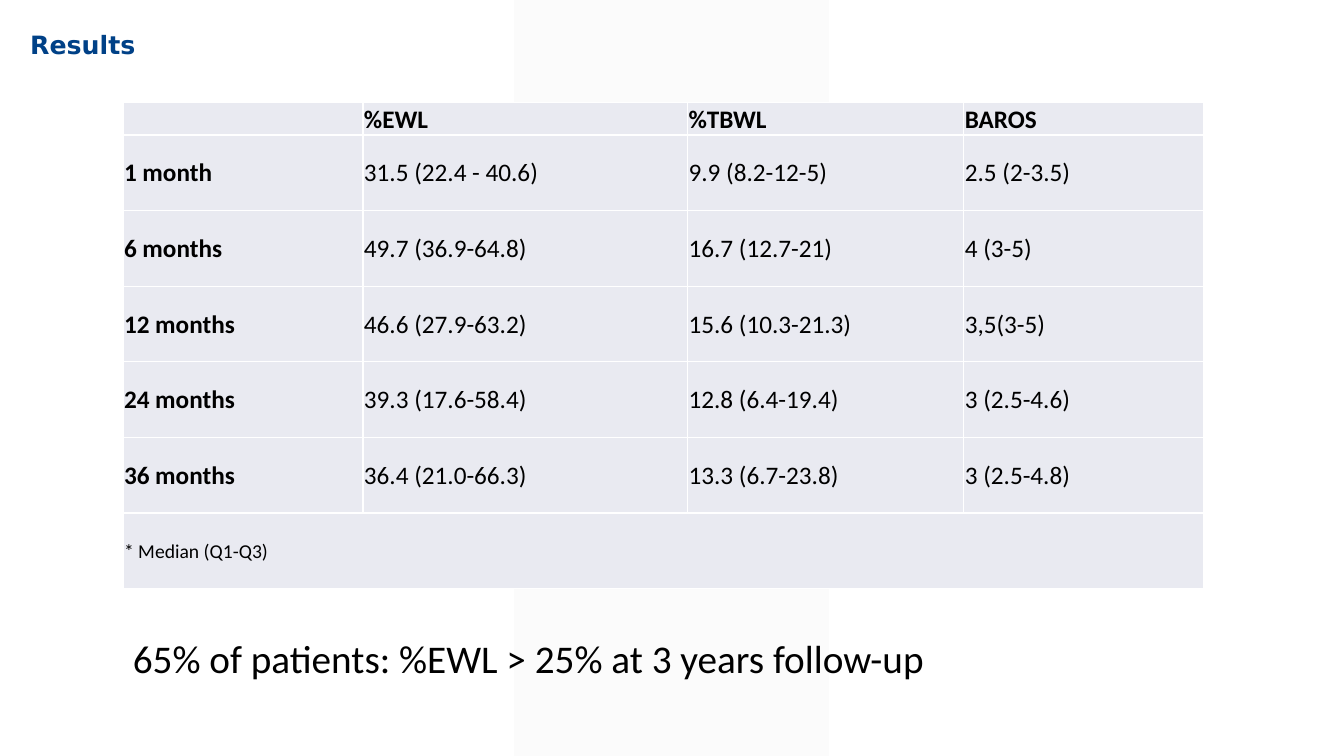
"""Build the results slide with its follow-up table."""
from lxml import etree
from pptx import Presentation
from pptx.dml.color import RGBColor
from pptx.enum.shapes import MSO_SHAPE
from pptx.enum.text import MSO_ANCHOR, MSO_AUTO_SIZE, PP_ALIGN
from pptx.oxml import parse_xml
from pptx.oxml.ns import nsdecls, qn
from pptx.util import Pt

SLANT = MSO_SHAPE.PARALLELOGRAM
TOP, MIDDLE = MSO_ANCHOR.TOP, MSO_ANCHOR.MIDDLE
GROW = MSO_AUTO_SIZE.SHAPE_TO_FIT_TEXT
LEFT = PP_ALIGN.LEFT

NAVY = RGBColor(0x00, 0x41, 0x87)
BLACK = RGBColor(0x00, 0x00, 0x00)
PALE = RGBColor(0xE9, 0xEA, 0xF1)
GREY = RGBColor(0xF2, 0xF2, 0xF2)
WHITE = RGBColor(0xFF, 0xFF, 0xFF)

SCALE = 9144
SIDES = ("left", "top", "right", "bottom")
COLS = (238, 322, 274, 238)
ROWS = (32,) + (75,) * 6
DATA = (
    ("", "%EWL", "%TBWL", "BAROS"),
    ("1 month", "31.5 (22.4 - 40.6)", "9.9 (8.2-12-5)", "2.5 (2-3.5)"),
    ("6 months", "49.7 (36.9-64.8)", "16.7 (12.7-21)", "4 (3-5)"),
    ("12 months", "46.6 (27.9-63.2)", "15.6 (10.3-21.3)", "3,5(3-5)"),
    ("24 months", "39.3 (17.6-58.4)", "12.8 (6.4-19.4)", "3 (2.5-4.6)"),
    ("36 months", "36.4 (21.0-66.3)", "13.3 (6.7-23.8)", "3 (2.5-4.8)"),
    ("* Median (Q1-Q3)",),
)


def px(n):
    """Turn px into EMU."""
    return n * SCALE


def apply(item, values):
    """Set each named value on the item."""
    for name, value in values.items():
        setattr(item, name, value)


def pad(item, sizes):
    """Set the four margins in px."""
    apply(item, {f"margin_{side}": px(n) for side, n in zip(SIDES, sizes)})


class Deck:
    """Hold the style and the current slide."""

    def __init__(self, width, height):
        """Open a deck with one title slide."""
        self.prs = Presentation()
        apply(self.prs, {"slide_width": px(width), "slide_height": px(height)})
        self.slide = self.prs.slides.add_slide(self.prs.slide_layouts[5])
        self.shapes = self.slide.shapes
        self.face = "Calibri"

    def label(self, frame, text, size, bold=False, color=BLACK, face=None):
        """Put one styled run into a text frame."""
        para = frame.paragraphs[0]
        para.alignment = LEFT
        run = para.add_run()
        run.text = text
        apply(run.font, {"size": Pt(size), "bold": bold, "name": face or self.face})
        run.font.color.rgb = color

    def band(self, box, color, alpha):
        """Draw a clear band behind the title."""
        shape = self.shapes.add_shape(SLANT, *map(px, box))
        shape.adjustments[0] = 0
        shape.shadow.inherit = False
        shape.line.fill.background()
        shape.fill.solid()
        shape.fill.fore_color.rgb = color
        tint = shape.element.spPr.find(f".//{qn('a:srgbClr')}")
        etree.SubElement(tint, qn("a:alpha"), val=str(alpha * 1000))
        self.shapes.title.element.addprevious(shape.element)

    def title(self, box, text):
        """Place and fill the title."""
        shape = self.shapes.title
        apply(shape, dict(zip(("left", "top", "width", "height"), map(px, box))))
        frame = shape.text_frame
        apply(frame, {"vertical_anchor": TOP, "word_wrap": True, "auto_size": GROW})
        pad(frame, (9, 1, 4, 1))
        self.label(frame, text, 18, True, NAVY, "DejaVu Sans")

    def text(self, box, text, size):
        """Add a wrapped text box."""
        frame = self.shapes.add_textbox(*map(px, box)).text_frame
        apply(frame, {"word_wrap": True, "auto_size": GROW})
        self.label(frame, text, size)

    def cell(self, cell, text, size, bold):
        """Style and fill one table cell."""
        pad(cell, (1, 1, 1, 0))
        cell.vertical_anchor = MIDDLE
        props = cell._tc.get_or_add_tcPr()
        for side in "LRTB":
            props.append(parse_xml(
                f'<a:ln{side} {nsdecls("a")} w="{Pt(1)}"><a:solidFill>'
                f'<a:srgbClr val="{WHITE}"/></a:solidFill></a:ln{side}>'))
        cell.fill.solid()
        cell.fill.fore_color.rgb = PALE
        if text:
            self.label(cell.text_frame, text, size, bold)

    def table(self, left, top, data, cols, rows):
        """Add the table with a merged note row."""
        box = (left, top, sum(cols), sum(rows))
        table = self.shapes.add_table(len(rows), len(cols), *map(px, box)).table
        apply(table, {"first_row": False, "horz_banding": False})
        for col, width in zip(table.columns, cols):
            col.width = px(width)
        for row, height in zip(table.rows, rows):
            row.height = px(height)
        last = len(rows) - 1
        table.cell(last, 0).merge(table.cell(last, len(cols) - 1))
        for r, line in enumerate(data):
            for c, text in enumerate(line):
                note = r == last
                bold = not note and (r == 0 or c == 0)
                self.cell(table.cell(r, c), text, 14 if note else 18, bold)


def main():
    """Build and save the slide."""
    deck = Deck(1333, 750)
    deck.band((510, 0, 312, 750), GREY, 30)
    deck.title((21, 28, 1244, 93), "Results")
    deck.table(122, 102, DATA, COLS, ROWS)
    deck.text((122, 624, 928, 104), "65% of patients: %EWL > 25% at 3 years follow-up", 28)
    deck.prs.save("out.pptx")


if __name__ == "__main__":
    main()
